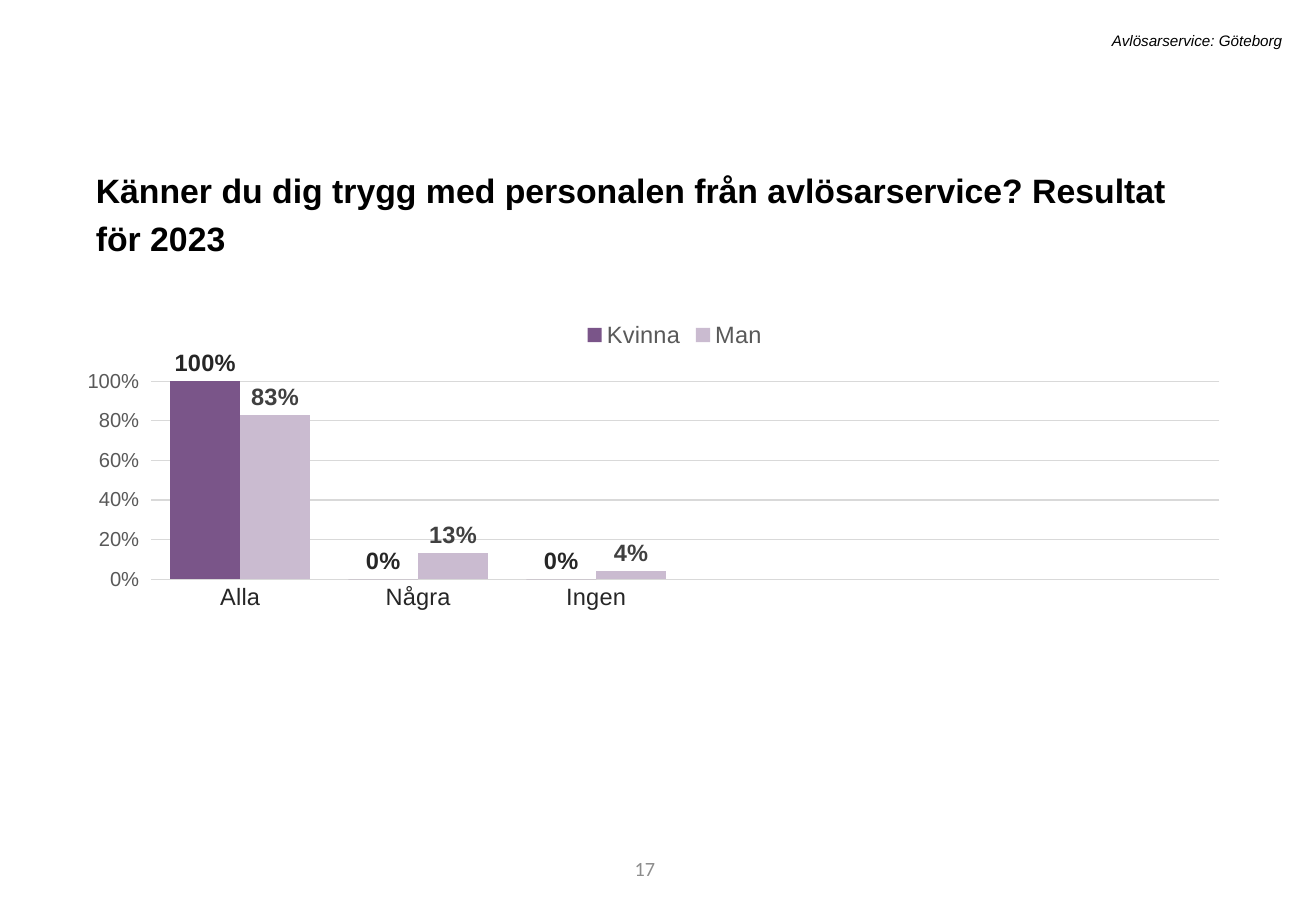
from lxml import etree
from pptx import Presentation
from pptx import util as u
from pptx.chart.data import CategoryChartData
from pptx.dml.color import RGBColor
from pptx.enum import chart as ch, text
from pptx.oxml.ns import qn

BLACK = RGBColor(0x00, 0x00, 0x00)
DARK = RGBColor(0x26, 0x26, 0x26)
CHARCOAL = RGBColor(0x40, 0x40, 0x40)
GREY = RGBColor(0x59, 0x59, 0x59)
PAGE_GREY = RGBColor(0x8C, 0x8C, 0x8C)
GRID = RGBColor(0xD9, 0xD9, 0xD9)
PURPLE = RGBColor(0x7A, 0x55, 0x89)
LILAC = RGBColor(0xCA, 0xBB, 0xD0)

CATEGORIES = ["Alla", "Några", "Ingen", "", "", ""]
# name, values, bar colour, label colour
SERIES = [
    ("Kvinna", [1, 0, 0, None, None, None], PURPLE, DARK),
    ("Man", [0.83, 0.13, 0.04, None, None, None], LILAC, CHARCOAL),
]


def set_font(font, size, color, name="Arial", bold=False, italic=False):
    font.name, font.size, font.color.rgb = name, u.Pt(size), color
    font.bold, font.italic = bold, italic


def add_text(slide, content, left, top, width, height, align=text.PP_ALIGN.LEFT,
             anchor=text.MSO_ANCHOR.TOP, line_spacing=None, space_before=0, **font):
    box = slide.shapes.add_textbox(*map(u.Inches, (left, top, width, height)))
    frame = box.text_frame
    frame.word_wrap = True
    frame.vertical_anchor = anchor
    paragraph = frame.paragraphs[0]
    paragraph.alignment = align
    paragraph.line_spacing = line_spacing
    paragraph.space_before = u.Pt(space_before)
    run = paragraph.add_run()
    run.text = content
    set_font(run.font, **font)


def set_layout(element, index, **values):
    """Place a chart part by fractions of the chart area."""
    for old in element.findall(qn("c:layout")):
        element.remove(old)
    layout = etree.Element(qn("c:layout"))
    manual = etree.SubElement(layout, qn("c:manualLayout"))
    for tag, value in values.items():
        etree.SubElement(manual, qn("c:" + tag)).set("val", str(value))
    element.insert(index, layout)


def style_line(line, color):
    line.color.rgb = color
    line.width = u.Pt(0.75)


def add_result_chart(slide, left, top, width, height):
    data = CategoryChartData(number_format="0%")
    data.categories = CATEGORIES
    for name, values, _, _ in SERIES:
        data.add_series(name, values)
    chart = slide.shapes.add_chart(
        ch.XL_CHART_TYPE.COLUMN_CLUSTERED,
        *map(u.Inches, (left, top, width, height)), data).chart
    set_font(chart.font, 10, BLACK)
    chart.has_title = False

    # Columns and value labels
    plot = chart.plots[0]
    plot.gap_width, plot.overlap, plot.vary_by_categories = 55, 0, False
    for series, (_, _, color, label_color) in zip(plot.series, SERIES):
        series.format.fill.solid()
        series.format.fill.fore_color.rgb = color
        labels = series.data_labels
        labels.show_value = True
        labels.position = ch.XL_LABEL_POSITION.OUTSIDE_END
        labels.number_format, labels.number_format_is_linked = "0%", False
        set_font(labels.font, 14, label_color, bold=True)

    # Axes
    category_axis, value_axis = chart.category_axis, chart.value_axis
    category_axis.major_tick_mark = ch.XL_TICK_MARK.NONE
    style_line(category_axis.format.line, GRID)
    set_font(category_axis.tick_labels.font, 14, DARK)
    value_axis.minimum_scale, value_axis.maximum_scale = 0, 1
    value_axis.major_unit = 0.2
    value_axis.format.line.fill.background()
    style_line(value_axis.major_gridlines.format.line, GRID)
    tick_labels = value_axis.tick_labels
    tick_labels.number_format, tick_labels.number_format_is_linked = "0%", False
    set_font(tick_labels.font, 12, GREY)

    # Legend and plot area
    chart.has_legend = True
    legend = chart.legend
    legend.position = ch.XL_LEGEND_POSITION.TOP
    legend.include_in_layout = False
    set_font(legend.font, 14, GREY)
    set_layout(legend._element, 1, xMode="edge", yMode="edge", x=0.43, y=0.02)
    set_layout(plot._element.getparent(), 0, layoutTarget="inner",
               xMode="edge", yMode="edge", x=0.054, y=0.154, w=0.937, h=0.413)


def main():
    presentation = Presentation()
    presentation.slide_width = u.Inches(10.83)
    presentation.slide_height = u.Inches(7.5)
    slide = presentation.slides.add_slide(presentation.slide_layouts[6])

    # Page number
    add_text(slide, "17", 3.05, 6.95, 2.44, 0.4, align=text.PP_ALIGN.RIGHT,
             anchor=text.MSO_ANCHOR.MIDDLE, size=12, color=PAGE_GREY, name="Calibri")
    add_result_chart(slide, 0.72, 2.53, 9.4, 3.95)
    # Question and header
    add_text(slide, "Känner du dig trygg med personalen från avlösarservice? Resultat för 2023",
             0.69, 1.28, 9.4, 0.47, line_spacing=1.2, space_before=10,
             size=20, color=BLACK, bold=True)
    add_text(slide, "Avlösarservice: Göteborg", 1.79, 0.21, 8.86, 0.25,
             align=text.PP_ALIGN.RIGHT, size=9, color=BLACK, italic=True)
    presentation.save("out.pptx")


if __name__ == "__main__":
    main()
